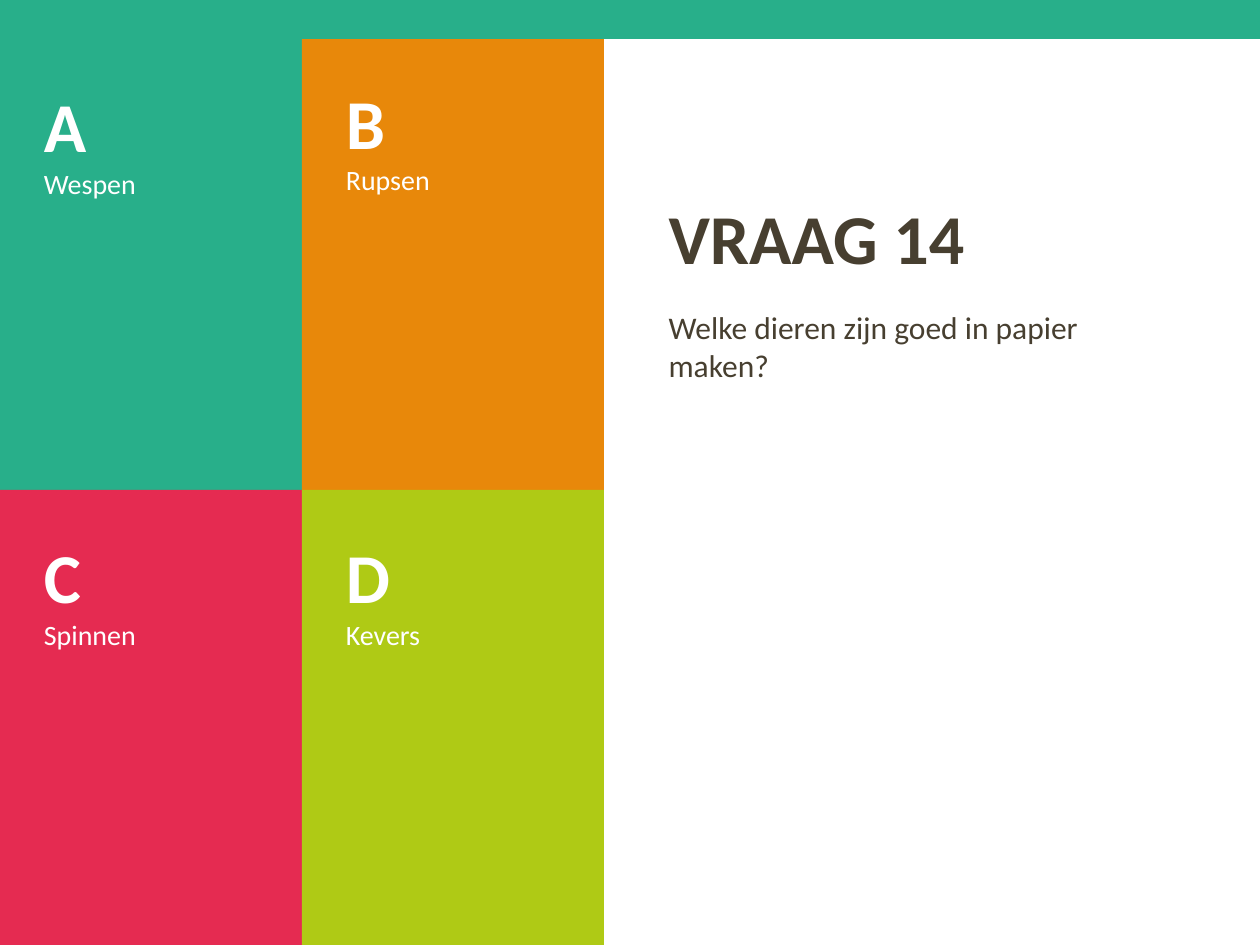
"""Build a quiz slide with a question and four coloured answer tiles."""
from dataclasses import dataclass

from lxml.etree import SubElement
from pptx import Presentation
from pptx.dml.color import RGBColor
from pptx.enum.shapes import MSO_SHAPE as Shape
from pptx.enum.text import MSO_ANCHOR as Anchor, MSO_AUTO_SIZE as AutoSize, PP_ALIGN as Align
from pptx.oxml.ns import qn
from pptx.util import Emu, Pt


@dataclass(frozen=True)
class Theme:
    font: str = "Calibri"
    ink: str = "473F30"
    white: str = "FFFFFF"
    green: str = "28AF8A"
    orange: str = "E8880A"
    red: str = "E52B51"
    lime: str = "AFCA15"
    heading: int = 40
    question: int = 18
    answer: int = 16


T = Theme()
TITLE = "VRAAG 14"
QUESTION = "Welke dieren zijn goed in papier maken?"
ANSWERS = [
    ("A", "Wespen", T.green, 39),
    ("B", "Rupsen", T.orange, 35),
    ("C", "Spinnen", T.red, 490),
    ("D", "Kevers", T.lime, 490),
]
SLIDE_W, SLIDE_H = 1260, 945
TILE_W, TILE_HEIGHTS, TILE_INSET = 302, (472, 455), 44
BAR = (0, 0, 1264, 39)
TITLE_BOX = (656, 165, 539, 120)
QUESTION_BOX = (656, 302, 539, 517)


def px(n):
    return Emu(round(n * 914400 / 126))


def add_run(p, text, size, color, bold=False):
    p.alignment = Align.LEFT
    r = p.add_run()
    r.text = text
    r.font.name = T.font
    r.font.size = Pt(size)
    r.font.bold = bold
    r.font.color.rgb = RGBColor.from_string(color)


def add_block(s, box, color):
    sp = s.shapes.add_shape(Shape.RECTANGLE, *map(px, box))
    sp.shadow.inherit = False
    sp.fill.solid()
    sp.fill.fore_color.rgb = RGBColor.from_string(color)
    sp.line.fill.background()
    return sp


def add_tile(s, index, letter, answer, color, top):
    row, col = divmod(index, 2)
    sp = add_block(s, (col * TILE_W, top, TILE_W, TILE_HEIGHTS[row]), color)
    tf = sp.text_frame
    tf.word_wrap = True
    tf.vertical_anchor = Anchor.TOP
    tf.margin_left = tf.margin_right = tf.margin_top = tf.margin_bottom = px(TILE_INSET)
    add_run(tf.paragraphs[0], letter, T.heading, T.white, bold=True)
    add_run(tf.add_paragraph(), answer, T.answer, T.white)


def fill_placeholder(sp, box, anchor, text, size, bold=False):
    sp.left, sp.top, sp.width, sp.height = map(px, box)
    tf = sp.text_frame
    tf.word_wrap = True
    tf.auto_size = AutoSize.NONE
    tf.vertical_anchor = anchor
    p = tf.paragraphs[0]
    add_run(p, text, size, T.ink, bold)
    pPr = p._p.get_or_add_pPr()
    pPr.set("marL", "0")
    pPr.set("indent", "0")
    SubElement(pPr, qn("a:buNone"))


def main():
    prs = Presentation()
    prs.slide_width, prs.slide_height = px(SLIDE_W), px(SLIDE_H)
    s = prs.slides.add_slide(prs.slide_layouts[1])
    fill_placeholder(s.shapes.title, TITLE_BOX, Anchor.BOTTOM, TITLE, T.heading, bold=True)
    fill_placeholder(s.placeholders[1], QUESTION_BOX, Anchor.TOP, QUESTION, T.question)
    for index, answer in enumerate(ANSWERS):
        add_tile(s, index, *answer)
    add_block(s, BAR, T.green)
    prs.save("out.pptx")


if __name__ == "__main__":
    main()
